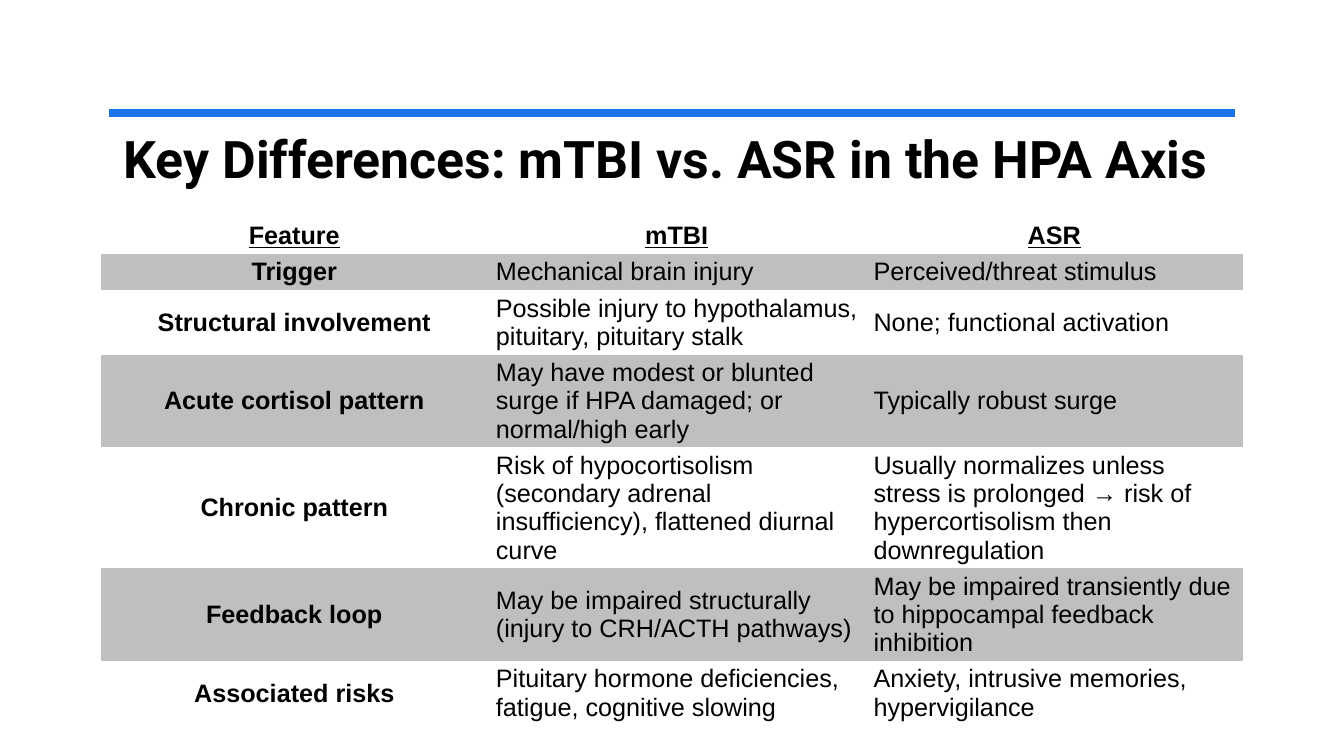
from lxml import etree
from pptx import Presentation
from pptx.dml.color import RGBColor
from pptx.enum.shapes import MSO_CONNECTOR
from pptx.enum.text import MSO_ANCHOR, MSO_AUTO_SIZE, PP_ALIGN
from pptx.oxml.ns import qn
from pptx.util import Inches, Pt

STRAIGHT = MSO_CONNECTOR.STRAIGHT
TOP, MIDDLE = MSO_ANCHOR.TOP, MSO_ANCHOR.MIDDLE
NO_AUTOFIT = MSO_AUTO_SIZE.NONE
LEFT, CENTER = PP_ALIGN.LEFT, PP_ALIGN.CENTER

BLACK = RGBColor(0x00, 0x00, 0x00)
BLUE = RGBColor(0x19, 0x73, 0xEB)
GRAY = RGBColor(0xBF, 0xBF, 0xBF)

GRID_COLS, GRID_ROWS = 40, 30
PLAIN_TABLE = "{2D5ABB26-0587-4C30-8999-92F81FD0307C}"

FEATURES = [
    ("Feature", "mTBI", "ASR"),
    ("Trigger", "Mechanical brain injury", "Perceived/threat stimulus"),
    ("Structural involvement",
     "Possible injury to hypothalamus, pituitary, pituitary stalk",
     "None; functional activation"),
    ("Acute cortisol pattern",
     "May have modest or blunted surge if HPA damaged; or normal/high early",
     "Typically robust surge"),
    ("Chronic pattern",
     "Risk of hypocortisolism (secondary adrenal insufficiency), flattened diurnal curve",
     "Usually normalizes unless stress is prolonged → risk of hypercortisolism then downregulation"),
    ("Feedback loop",
     "May be impaired structurally (injury to CRH/ACTH pathways)",
     "May be impaired transiently due to hippocampal feedback inhibition"),
    ("Associated risks",
     "Pituitary hormone deficiencies, fatigue, cognitive slowing",
     "Anxiety, intrusive memories, hypervigilance"),
]
COL_SPANS = [11.52, 11.24, 11.24]
ROW_SPANS = [1.36, 1.36, 2.28, 2.28, 3.2, 2.28, 2.28]
SHADED_ROWS = {1, 3, 5}


class Deck:
    title_font, body_font = "Roboto", "Arial"
    title_size, body_size = Pt(37), Pt(18)

    def __init__(self):
        self.prs = Presentation()
        self.prs.slide_width, self.prs.slide_height = Inches(13.33), Inches(7.5)
        self.slide = self.prs.slides.add_slide(self.prs.slide_layouts[5])

    def x(self, cols):
        return round(self.prs.slide_width * cols / GRID_COLS)

    def y(self, rows):
        return round(self.prs.slide_height * rows / GRID_ROWS)

    def run(self, p, text, font, size, bold=False, underline=False):
        r = p.add_run()
        r.text = text
        r.font.name, r.font.size = font, size
        r.font.bold, r.font.underline = bold, underline
        r.font.color.rgb = BLACK

    def title(self, text, col, row, cols, rows):
        sp = self.slide.shapes.title
        sp.left, sp.top = self.x(col), self.y(row)
        sp.width, sp.height = self.x(cols), self.y(rows)
        tf = sp.text_frame
        tf.word_wrap, tf.auto_size = True, NO_AUTOFIT
        tf.vertical_anchor = TOP
        p = tf.paragraphs[0]
        p.alignment = LEFT
        self.run(p, text, self.title_font, self.title_size, bold=True)

    def rule(self, col, row, end_col, width):
        line = self.slide.shapes.add_connector(
            STRAIGHT, self.x(col), self.y(row), self.x(end_col), self.y(row))
        line.line.color.rgb = BLUE
        line.line.width = width
        etree.SubElement(line._element.spPr, qn("a:effectLst"))

    def cell(self, cell, text, heading, label, shaded):
        cell.margin_left = cell.margin_right = Inches(0.08)
        cell.margin_top = cell.margin_bottom = Inches(0.04)
        cell.vertical_anchor = MIDDLE
        if shaded:
            cell.fill.solid()
            cell.fill.fore_color.rgb = GRAY
        else:
            cell.fill.background()
        p = cell.text_frame.paragraphs[0]
        strong = heading or label
        p.alignment = CENTER if strong else LEFT
        self.run(p, text, self.body_font, self.body_size, strong, heading)

    def table(self, data, col, row, col_spans, row_spans, shaded_rows):
        table = self.slide.shapes.add_table(
            len(data), len(col_spans), self.x(col), self.y(row),
            self.x(sum(col_spans)), self.y(sum(row_spans))).table
        table.horz_banding = table.first_row = False
        table._tbl.tblPr.find(qn("a:tableStyleId")).text = PLAIN_TABLE
        for column, span in zip(table.columns, col_spans):
            column.width = self.x(span)
        for i, (values, span) in enumerate(zip(data, row_spans)):
            table.rows[i].height = self.y(span)
            for j, text in enumerate(values):
                self.cell(table.cell(i, j), text, i == 0, j == 0, i in shaded_rows)


def main():
    deck = Deck()
    deck.title("\N{NO-BREAK SPACE}Key Differences: mTBI vs. ASR in the HPA Axis", 3, 4.84, 34, 5)
    deck.rule(3.25, 4.48, 36.75, Pt(6))
    deck.table(FEATURES, 3, 8.64, COL_SPANS, ROW_SPANS, SHADED_ROWS)
    deck.prs.save("out.pptx")


if __name__ == "__main__":
    main()
